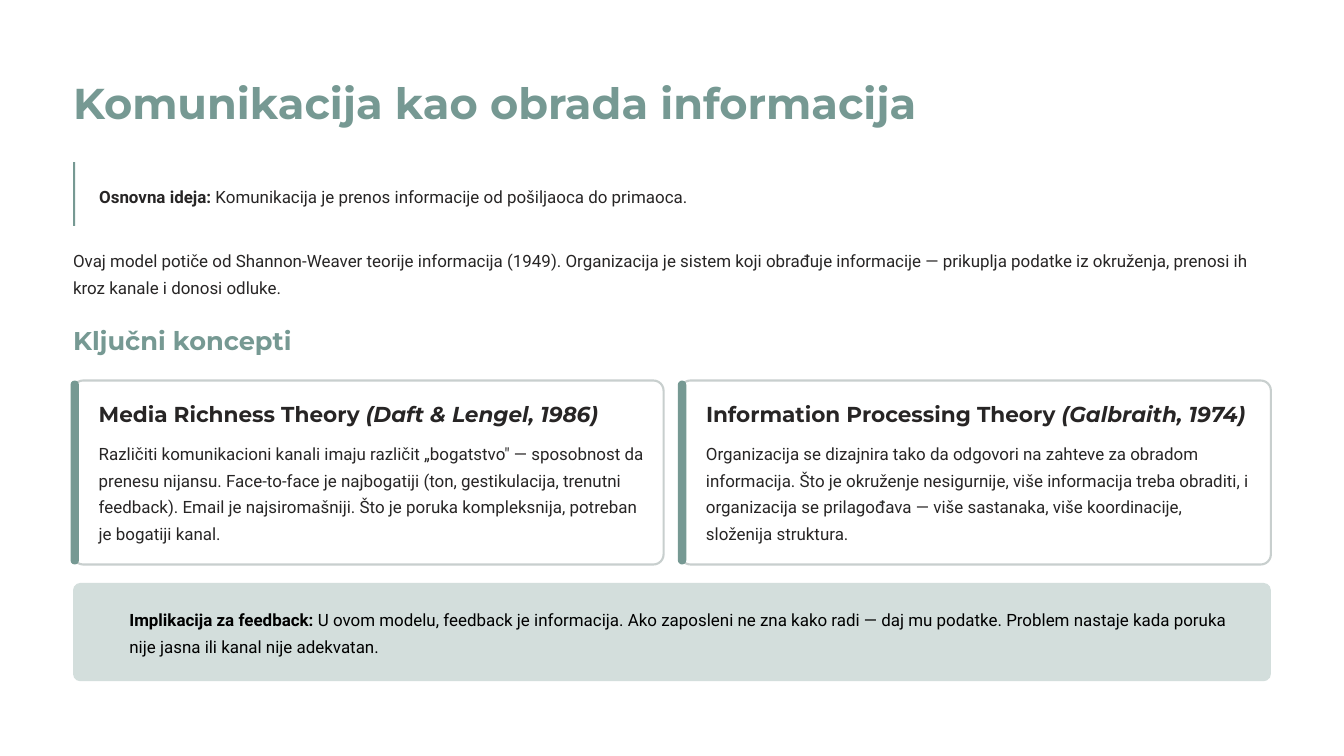
import dataclasses

import pptx
import pptx.dml.color
import pptx.enum.shapes
import pptx.util

SHAPES = pptx.enum.shapes.MSO_SHAPE


@dataclasses.dataclass(frozen=True)
class Theme:
    accent: str = "769993"
    ink: str = "272525"
    black: str = "000000"
    white: str = "FFFFFF"
    edge: str = "C8CFCE"
    tint: str = "D3DEDC"
    head: str = "Montserrat"
    body: str = "Roboto"
    title: float = 37
    section: float = 22
    label: float = 18.5
    text: float = 14.5
    lead: float = 23


class Deck:
    """Places elements on a grid of 160 columns by 90 rows."""

    def __init__(self, theme):
        self.theme = theme
        self.prs = pptx.Presentation()
        self.prs.slide_width = pptx.util.Inches(16)
        self.prs.slide_height = pptx.util.Inches(9)
        self.slide = self.prs.slides.add_slide(self.prs.slide_layouts[6])
        fill = self.slide.background.fill
        fill.solid()
        fill.fore_color.rgb = self.tone(theme.white)

    def tone(self, code):
        return pptx.dml.color.RGBColor.from_string(code)

    def grid(self, col, row, cols, rows):
        wide, high = self.prs.slide_width / 160, self.prs.slide_height / 90
        return [round(n) for n in (col * wide, row * high, cols * wide, rows * high)]

    def block(self, area, fill, bend=None, edge=None):
        """Draw a filled box, rounded when bend is given."""
        kind = SHAPES.RECTANGLE if bend is None else SHAPES.ROUNDED_RECTANGLE
        box = self.slide.shapes.add_shape(kind, *self.grid(*area))
        box.shadow.inherit = False
        if bend is not None:
            box.adjustments[0] = bend
        box.fill.solid()
        box.fill.fore_color.rgb = self.tone(fill)
        if edge:
            box.line.color.rgb = self.tone(edge)
            box.line.width = pptx.util.Pt(1.8)
        else:
            box.line.fill.background()

    def text(self, area, *parts, face=None, size=None, color=None, lead=None, wrap=True):
        """Write one paragraph; each part is its words and style marks (b, i)."""
        theme = self.theme
        frame = self.slide.shapes.add_textbox(*self.grid(*area)).text_frame
        frame.word_wrap = wrap
        frame.margin_left = frame.margin_right = 0
        frame.margin_top = frame.margin_bottom = 0
        para = frame.paragraphs[0]
        para.line_spacing = pptx.util.Pt(lead or theme.lead)
        for words, marks in parts:
            run = para.add_run()
            run.text = words
            run.font.name = face or theme.body
            run.font.size = pptx.util.Pt(size or theme.text)
            run.font.color.rgb = self.tone(color or theme.ink)
            run.font.bold = "b" in marks
            run.font.italic = "i" in marks

    def card(self, col, name, cite, body):
        """Draw a concept card with its accent bar."""
        theme = self.theme
        top, high = 45.3, 21.9
        self.block((col, top, 70.3, high), theme.white, 0.055, theme.edge)
        self.block((col - 0.3, top, 1, high), theme.accent, 0.5)
        self.text((col + 3.05, top + 2.3, 66.5, 3.2), (name + " ", "b"), (cite, "bi"),
                  face=theme.head, size=theme.label, wrap=False)
        self.text((col + 3.05, top + 6.7, 65, 12.9), (body, ""))


def main():
    theme = Theme()
    deck = Deck(theme)
    left, full = 8.7, 142.6

    deck.text((left, 8.9, 100.8, 6.4), ("Komunikacija kao obrada informacija", "b"),
              face=theme.head, size=theme.title, color=theme.accent, lead=46, wrap=False)
    deck.text((left + 3.1, 21.45, 139.5, 3.2), ("Osnovna ideja:", "b"),
              (" Komunikacija je prenos informacije od pošiljaoca do primaoca.", ""), wrap=False)
    deck.block((left, 19.3, 0.25, 7.6), theme.accent)
    deck.text((left, 29.1, full, 6.4), (
        "Ovaj model potiče od Shannon-Weaver teorije informacija (1949). Organizacija je "
        "sistem koji obrađuje informacije — prikuplja podatke iz okruženja, prenosi ih kroz "
        "kanale i donosi odluke.", ""))
    deck.text((left, 38.5, 30.9, 3.9), ("Ključni koncepti", "b"),
              face=theme.head, size=theme.section, color=theme.accent, lead=27.5, wrap=False)

    cards = [
        ("Media Richness Theory", "(Daft & Lengel, 1986)",
         "Različiti komunikacioni kanali imaju različit „bogatstvo\" — sposobnost da prenesu "
         "nijansu. Face-to-face je najbogatiji (ton, gestikulacija, trenutni feedback). Email "
         "je najsiromašniji. Što je poruka kompleksnija, potreban je bogatiji kanal."),
        ("Information Processing Theory", "(Galbraith, 1974)",
         "Organizacija se dizajnira tako da odgovori na zahteve za obradom informacija. Što je "
         "okruženje nesigurnije, više informacija treba obraditi, i organizacija se "
         "prilagođava — više sastanaka, više koordinacije, složenija struktura."),
    ]
    for spot, card in enumerate(cards):
        deck.card(left + spot * 72.3, *card)

    deck.block((left, 69.4, full, 11.7), theme.tint, 0.074)
    deck.text((left + 6.7, 71.8, 133.9, 6.4), ("Implikacija za feedback:", "b"), (
        " U ovom modelu, feedback je informacija. Ako zaposleni ne zna kako radi — daj mu "
        "podatke. Problem nastaje kada poruka nije jasna ili kanal nije adekvatan.", ""),
        color=theme.black)

    deck.prs.save("out.pptx")


if __name__ == "__main__":
    main()
